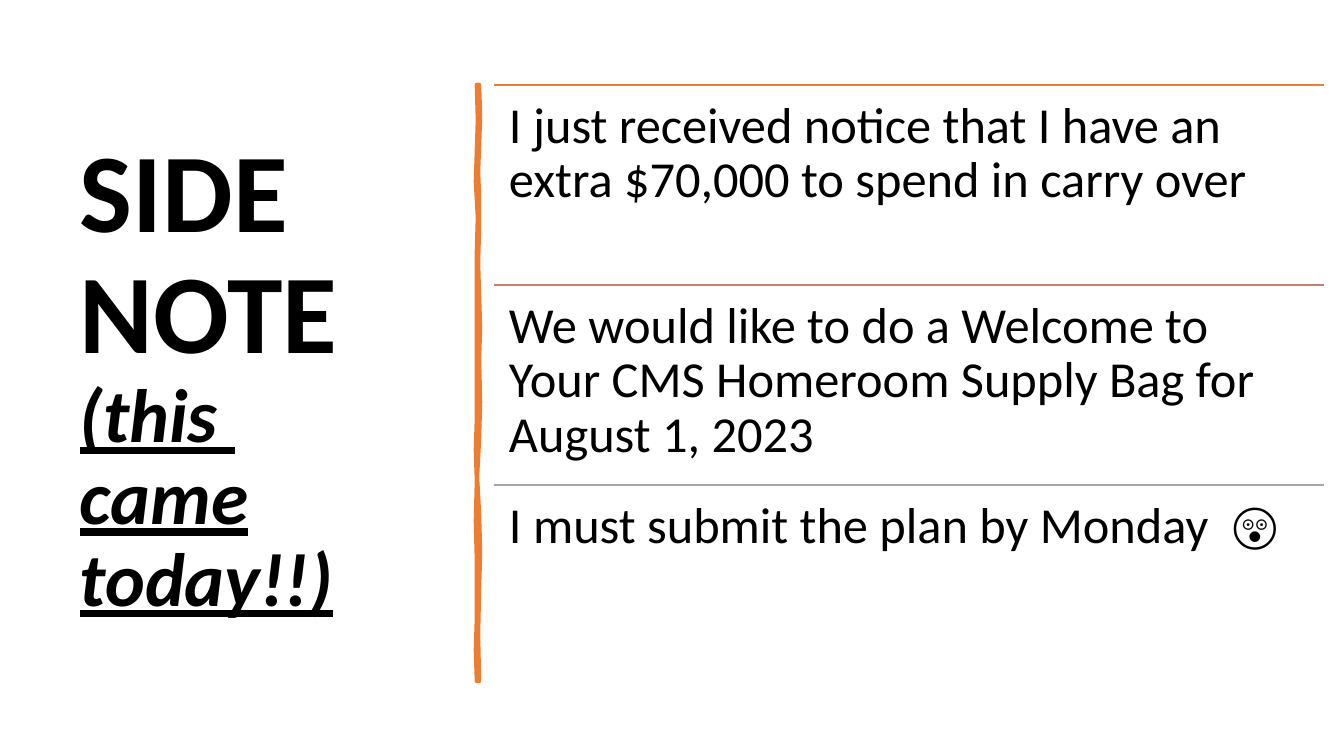
from lxml.etree import SubElement
from pptx import Presentation
from pptx.dml.color import RGBColor
from pptx.enum.shapes import MSO_CONNECTOR
from pptx.enum.text import MSO_ANCHOR
from pptx.oxml.ns import qn
from pptx.util import Emu, Pt

PX = 914400 / 100.8
COLORS = {"ink": "000000", "orange": "ED7D31", "rust": "C48170", "gray": "A5A5A5"}


def px(length):
    return Emu(round(length * PX))


def color(name):
    return RGBColor.from_string(COLORS[name])


def add_text(paragraph, text, size=36, bold=None, italic=None, underline=None):
    """Add formatted text; each newline becomes a line break."""
    for index, line in enumerate(text.split("\n")):
        if index:
            paragraph.add_line_break()
        if line:
            run = paragraph.add_run()
            run.text = line
            font = run.font
            font.name, font.size = "Calibri", Pt(size)
            font.bold, font.italic, font.underline = bold, italic, underline
            font.color.rgb = color("ink")


class NoteSlide:
    def __init__(self, presentation):
        self.shapes = presentation.slides.add_slide(presentation.slide_layouts[6]).shapes

    def text_box(self, left, top, width, height, inset, anchor=MSO_ANCHOR.TOP):
        frame = self.shapes.add_textbox(px(left), px(top), px(width), px(height)).text_frame
        frame.word_wrap = True
        frame.vertical_anchor = anchor
        frame.margin_left = frame.margin_right = px(inset[0])
        frame.margin_top = frame.margin_bottom = px(inset[1])
        paragraph = frame.paragraphs[0]
        paragraph.line_spacing = 0.9
        return paragraph

    def rule(self, left, right, y, tint):
        line = self.shapes.add_connector(MSO_CONNECTOR.STRAIGHT, px(left), px(y), px(right), px(y))
        line.line.color.rgb = color(tint)
        line.line.width = Pt(1)
        SubElement(line._element.spPr, qn("a:effectLst"))

    def outline(self, points, tint, weight):
        builder = self.shapes.build_freeform(*points[0], scale=PX)
        builder.add_line_segments(points[1:], close=True)
        shape = builder.convert_to_shape()
        shape.shadow.inherit = False
        shape.fill.solid()
        shape.fill.fore_color.rgb = color(tint)
        shape.line.color.rgb = color(tint)
        shape.line.width = Pt(weight)


def main():
    presentation = Presentation()
    presentation.slide_width, presentation.slide_height = px(1344), px(756)
    slide = NoteSlide(presentation)

    # Heading
    heading = slide.text_box(70, 71, 377, 616, inset=(10, 5), anchor=MSO_ANCHOR.MIDDLE)
    add_text(heading, "SIDE \nNOTE \n", size=80, bold=True)
    add_text(heading, "(this \ncame today!!)", size=54, bold=True, italic=True, underline=True)

    # Hand-drawn divider: down the right edge, up the left edge
    right_edge = [(479, 85), (480, 115), (479, 147), (478, 172), (479, 196), (479, 228),
                  (478, 262), (479, 296), (480, 327), (479, 359), (480, 402), (479, 439),
                  (477, 477), (479, 514), (480, 552), (479, 589), (478, 635), (479, 681)]
    left_edge = [(477, 681), (476, 650), (477, 618), (477, 561), (476, 521), (477, 481),
                 (476, 450), (477, 418), (477, 338), (477, 252), (478, 217), (476, 182),
                 (478, 120), (477, 85)]
    slide.outline(right_edge + left_edge, "orange", 3.25)

    # Notes, each under its own rule
    notes = [
        ("orange", "I just received notice that I have an extra $70,000 to spend in carry over"),
        ("rust", "We would like to do a Welcome to Your CMS Homeroom Supply Bag for August 1, 2023"),
        ("gray", "I must submit the plan by Monday  😲"),
    ]
    notes_left, notes_top, notes_width, note_height = 494, 85, 830, 200
    for index, (tint, note) in enumerate(notes):
        top = notes_top + index * note_height
        slide.rule(notes_left, notes_left + notes_width, top, tint)
        add_text(slide.text_box(notes_left, top, notes_width, note_height, inset=(15, 15)), note)

    presentation.save("out.pptx")


if __name__ == "__main__":
    main()
